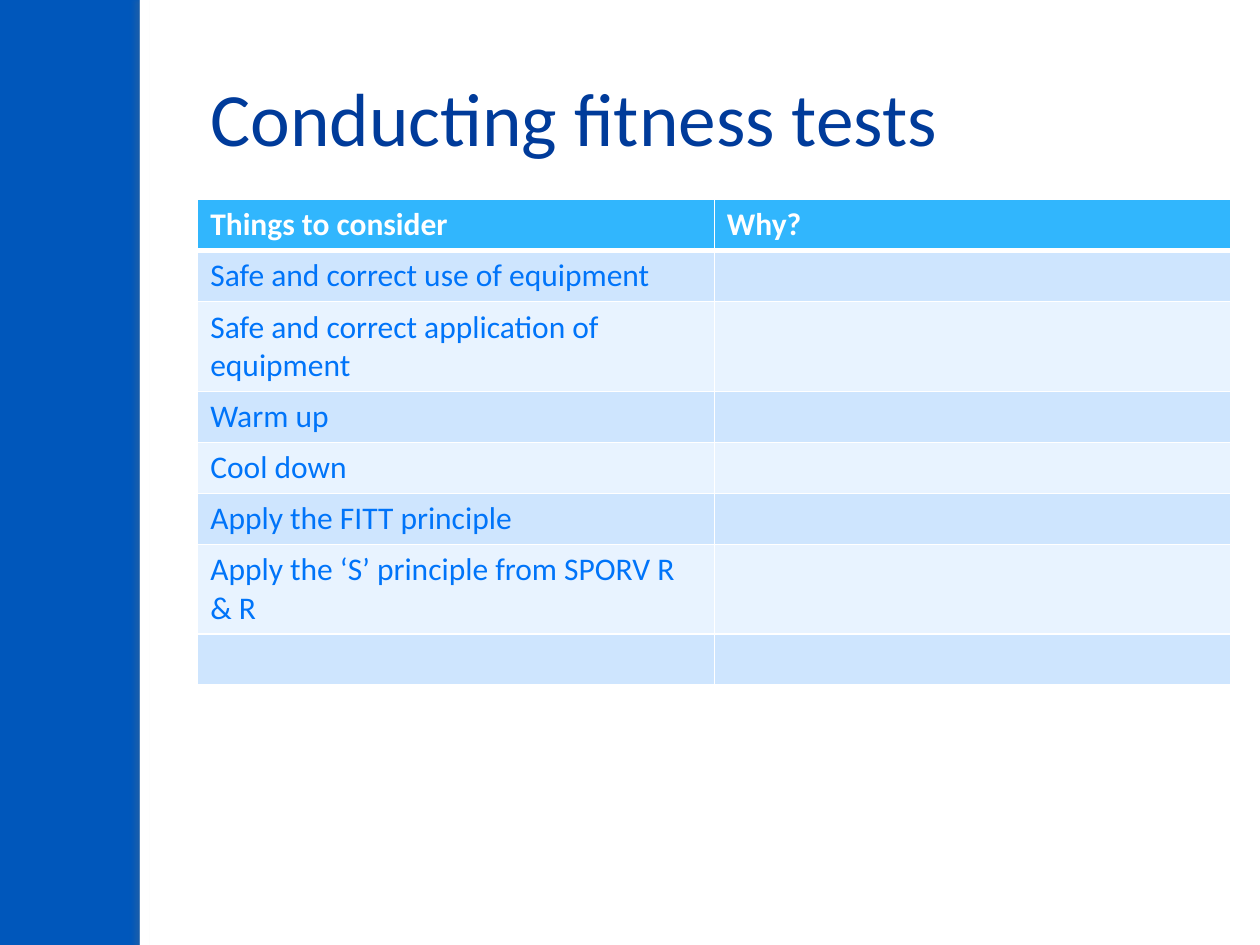
from lxml.etree import SubElement
from pptx import Presentation
from pptx.dml.color import RGBColor
from pptx.enum.shapes import MSO_SHAPE as Shape
from pptx.enum.text import MSO_ANCHOR as Anchor, PP_ALIGN as Align
from pptx.oxml.ns import qn
from pptx.util import Pt

TITLE = "Conducting fitness tests"
ROWS = [
    ("Things to consider", "Why?"),
    ("Safe and correct use of equipment", ""),
    ("Safe and correct application of equipment", ""),
    ("Warm up", ""),
    ("Cool down", ""),
    ("Apply the FITT principle", ""),
    ("Apply the ‘S’ principle from SPORV R & R", ""),
    ("", ""),
]
COLORS = {
    "background": "0057BB", "white": "FFFFFF", "shadow": "61737F",
    "title": "003B9A", "header": "31B6FD", "text": "0074F9",
    "odd": "CEE5FE", "even": "E8F3FF",
}
FONT = "Calibri"
SLIDE_WIDTH, SLIDE_HEIGHT = 720, 540
PANEL_LEFT, EDGE_WIDTH = 80, 5.5
CONTENT_LEFT, CONTENT_WIDTH = 113, 590.4
TITLE_TOP, TITLE_HEIGHT = 21.6, 90
TABLE_TOP, ROW_HEIGHT = 114, 29.2


def color(name):
    return RGBColor.from_string(COLORS[name])


def format_text(text_frame, size, color_name, bold=False):
    for paragraph in text_frame.paragraphs:
        for run in paragraph.runs:
            font = run.font
            font.name, font.size, font.bold = FONT, Pt(size), bold
            font.color.rgb = color(color_name)


def add_panel(slide, left, width):
    panel = slide.shapes.add_shape(
        Shape.RECTANGLE, Pt(left), 0, Pt(width), Pt(SLIDE_HEIGHT))
    panel.shadow.inherit = False
    panel.fill.solid()
    panel.fill.fore_color.rgb = color("white")
    panel.line.fill.background()
    return panel


def add_left_shadow(shape):
    effects = shape._element.spPr.find(qn("a:effectLst"))
    shadow = SubElement(effects, qn("a:outerShdw"), blurRad=str(Pt(3)),
                        dist=str(Pt(3)), dir=str(180 * 60000),
                        algn="ctr", rotWithShape="0")
    shade = SubElement(shadow, qn("a:srgbClr"), val=COLORS["shadow"])
    SubElement(shade, qn("a:alpha"), val="25000")


def set_borders(cell, widths):
    properties = cell._tc.get_or_add_tcPr()
    for side, width in widths.items():
        line = SubElement(properties, qn(f"a:ln{side}"), w=str(Pt(width)))
        fill = SubElement(line, qn("a:solidFill"))
        SubElement(fill, qn("a:srgbClr"), val=COLORS["white"])


def add_title(slide):
    title = slide.shapes.title
    title.left, title.top = Pt(CONTENT_LEFT), Pt(TITLE_TOP)
    title.width, title.height = Pt(CONTENT_WIDTH), Pt(TITLE_HEIGHT)
    text_frame = title.text_frame
    text_frame.text = TITLE
    text_frame.word_wrap = True
    text_frame.vertical_anchor = Anchor.MIDDLE
    text_frame.paragraphs[0].alignment = Align.LEFT
    format_text(text_frame, 43, "title")
    slide.shapes._spTree.append(title._element)


def add_table(slide):
    table = slide.shapes.add_table(
        len(ROWS), len(ROWS[0]), Pt(CONTENT_LEFT), Pt(TABLE_TOP),
        Pt(CONTENT_WIDTH), Pt(ROW_HEIGHT * len(ROWS))).table
    for row_index, texts in enumerate(ROWS):
        table.rows[row_index].height = Pt(ROW_HEIGHT)
        header = row_index == 0
        band = "header" if header else ("even", "odd")[row_index % 2]
        widths = {"L": 1, "R": 1, "T": 3 if row_index == 1 else 1,
                  "B": 3 if header else 1}
        for column_index, text in enumerate(texts):
            cell = table.cell(row_index, column_index)
            set_borders(cell, widths)
            cell.fill.solid()
            cell.fill.fore_color.rgb = color(band)
            if text:
                cell.text_frame.text = text
                format_text(cell.text_frame, 18,
                            "white" if header else "text", header)


def main():
    """Build the fitness test slide and save it."""
    presentation = Presentation()
    presentation.slide_width = Pt(SLIDE_WIDTH)
    presentation.slide_height = Pt(SLIDE_HEIGHT)
    slide = presentation.slides.add_slide(presentation.slide_layouts[5])
    slide.background.fill.solid()
    slide.background.fill.fore_color.rgb = color("background")
    add_panel(slide, PANEL_LEFT, SLIDE_WIDTH - PANEL_LEFT)
    add_left_shadow(add_panel(slide, PANEL_LEFT, EDGE_WIDTH))
    add_title(slide)
    add_table(slide)
    presentation.save("out.pptx")


if __name__ == "__main__":
    main()
